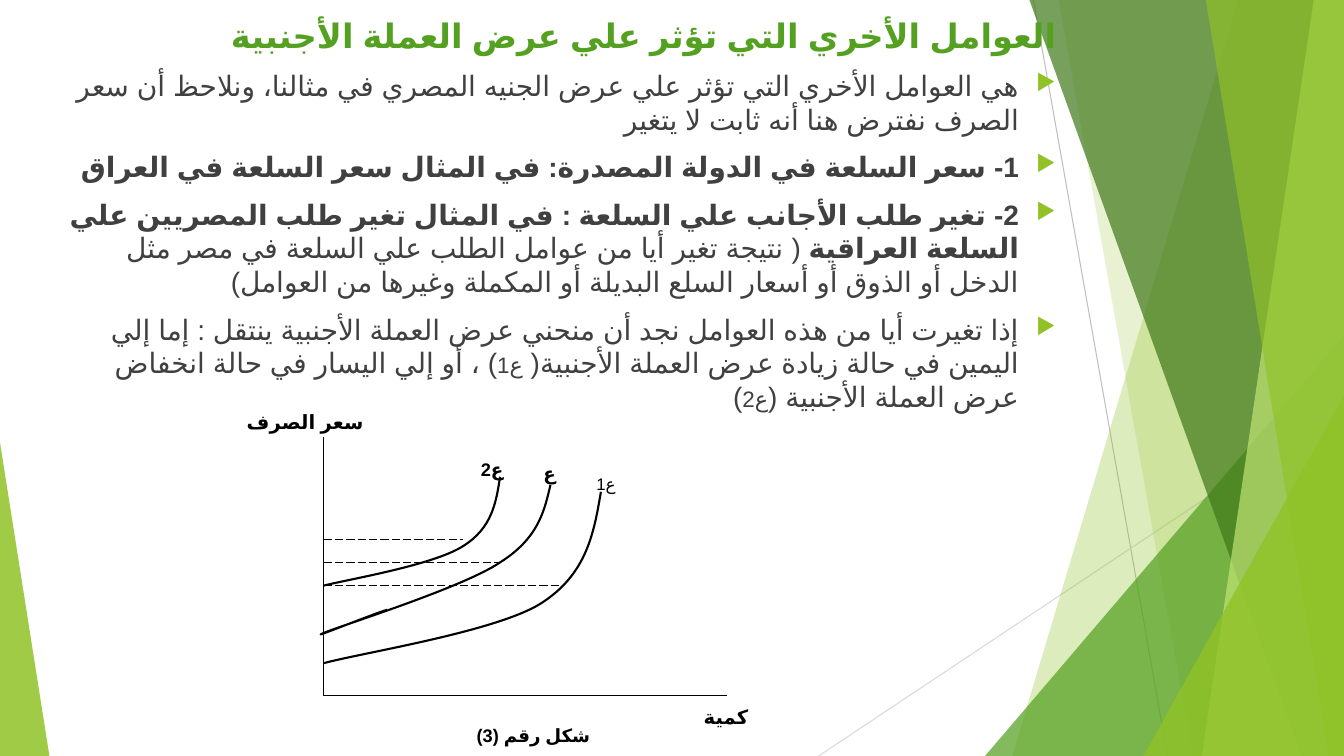
from lxml import etree
from pptx import Presentation
from pptx import util as u
from pptx.dml.color import RGBColor
from pptx.enum import dml, lang, shapes, text
from pptx.oxml.ns import qn

PX = 9144
COLORS = {
    "lime": "90C226", "green": "54A021", "forest": "3F7819", "pale": "C0E474",
    "body": "404040", "black": "000000", "white": "FFFFFF",
    "gray": "BFBFBF", "light": "D9D9D9",
}
HEADING = "العوامل الأخري التي تؤثر علي عرض العملة الأجنبية"
POINTS = [
    [("هي العوامل الأخري التي تؤثر علي عرض الجنيه المصري في مثالنا، ونلاحظ أن سعر الصرف نفترض هنا أنه ثابت لا يتغير", 20, False)],
    [("1- سعر السلعة في الدولة المصدرة: في المثال سعر السلعة في العراق", 20, True)],
    [("2- تغير طلب الأجانب علي السلعة : في المثال تغير طلب المصريين علي السلعة العراقية ", 20, True),
     ("( نتيجة تغير أيا من عوامل الطلب علي السلعة في مصر مثل الدخل أو الذوق أو أسعار السلع البديلة أو المكملة وغيرها من العوامل)", 20, False)],
    [("إذا تغيرت أيا من هذه العوامل نجد أن منحني عرض العملة الأجنبية ينتقل : إما إلي اليمين في حالة زيادة عرض العملة الأجنبية( ", 20, False),
     ("ع1", 16, False),
     (") ، أو إلي اليسار في حالة انخفاض عرض العملة الأجنبية (", 20, False),
     ("ع2", 16, False), (")", 20, False)],
]
WEDGES_BACK = [(1228, 1004, "lime", 30), (1050, 1183, "lime", 20)]
WEDGES_FRONT = [(1021, 1291, "forest", 70), (1303, 1192, "pale", 70),
                (1196, 1318, "lime", 65)]
CURVES = [
    [(362, 85), (355, 126), (348, 167), (302, 196),
     (257, 224), (123, 245), (87, 255)],
    [(312, 78), (306, 104), (300, 131), (262, 155),
     (225, 180), (106, 217), (87, 225), (69, 233), (139, 205), (150, 202)],
    [(262, 70), (258, 96), (254, 121), (225, 139),
     (195, 158), (110, 172), (87, 178)],
]
LABELS = [
    ("كمية", 430, 292, 112, 14, "Calibri", True, True),
    ("شكل رقم (3)", 214, 312, 162, 13, "Calibri", True, True),
    ("ع1", 336, 63, 62, 12, "Arial", False, False),
    ("ع", 280, 52, 62, 13, "Calibri", True, False),
    ("ع2", 223, 48, 62, 13, "Calibri", True, False),
    ("سعر الصرف", 0, 0, 137, 14, "Calibri", True, True),
]


def rgb(name):
    """Return the named colour."""
    return RGBColor.from_string(COLORS[name])


def px(*lengths):
    """Turn px lengths into EMU."""
    return [round(n * PX) for n in lengths]


def style_run(r, font, size, color, bold):
    """Format a run for Latin and complex scripts."""
    r.font.name, r.font.size, r.font.bold = font, u.Pt(size), bold
    r.font.color.rgb = rgb(color)
    r.font.language_id = lang.MSO_LANGUAGE_ID.ARABIC_EGYPT
    etree.SubElement(r.font._element, qn("a:cs"), typeface="Arial")


def set_rtl(p, align):
    """Make a paragraph run right to left."""
    p.alignment = align
    p._p.get_or_add_pPr().set("rtl", "1")


def add_bullet(p):
    """Give a paragraph a hanging triangle bullet."""
    pPr = p._p.get_or_add_pPr()
    pPr.set("marL", "342900")
    pPr.set("indent", "-342900")
    color = etree.SubElement(pPr, qn("a:buClr"))
    etree.SubElement(color, qn("a:srgbClr"), val=COLORS["lime"])
    etree.SubElement(pPr, qn("a:buSzPct"), val="80000")
    etree.SubElement(pPr, qn("a:buChar"), char="▶")


def add_line(s, start, end, color, dashed=False):
    """Draw a thin straight line."""
    line = s.shapes.add_connector(shapes.MSO_CONNECTOR.STRAIGHT, *px(*start, *end))
    line.line.color.rgb, line.line.width = rgb(color), u.Pt(0.75)
    if dashed:
        line.line.dash_style = dml.MSO_LINE.LONG_DASH
    etree.SubElement(line._element.spPr, qn("a:effectLst"))


def add_outline(s, points, close):
    """Build a freeform through px points."""
    start, *rest = [px(*point) for point in points]
    builder = s.shapes.build_freeform(*start)
    builder.add_line_segments(rest, close=close)
    sp = builder.convert_to_shape()
    sp.shadow.inherit = False
    return sp


def add_curve(s, knots):
    """Build joined cubic curves from end and control points."""
    sp = add_outline(s, knots, False)
    segments = sp._element.xpath(".//a:lnTo")
    for i in range(0, len(segments), 3):
        cubic = etree.Element(qn("a:cubicBezTo"))
        segments[i].addprevious(cubic)
        for segment in segments[i:i + 3]:
            cubic.append(segment[0])
            segment.getparent().remove(segment)
    sp.fill.background()
    sp.line.color.rgb, sp.line.width = rgb("black"), u.Pt(1.5)


def tint(sp, color, opacity):
    """Fill a shape with a translucent colour and no line."""
    sp.fill.solid()
    sp.fill.fore_color.rgb = rgb(color)
    clr = sp._element.xpath("./p:spPr/a:solidFill/a:srgbClr")[0]
    etree.SubElement(clr, qn("a:alpha"), val=str(opacity * 1000))
    sp.line.fill.background()


def add_triangle(s, box, apex, color, opacity):
    """Add a translucent right triangle."""
    sp = s.shapes.add_shape(shapes.MSO_SHAPE.ISOSCELES_TRIANGLE, *px(*box))
    sp.adjustments[0] = apex
    sp.shadow.inherit = False
    tint(sp, color, opacity)


def add_wedges(s, box, wedges):
    """Add slanted panels that reach the right edge of the box."""
    x, y, w, h = box
    for top, bottom, color, opacity in wedges:
        corners = [(x + top, y), (x + w, y), (x + w, y + h), (x + bottom, y + h)]
        tint(add_outline(s, corners, True), color, opacity)


def add_backdrop(s, box):
    """Draw the green facets along the slide's sides."""
    x, y, w, h = box
    add_line(s, (x + 1025, y), (x + 1158, y + h), "gray")
    add_line(s, (x + w, y + 403), (x + 812, y + h), "light")
    add_wedges(s, box, WEDGES_BACK)
    add_triangle(s, (x + w - 356, y + h - 417, 356, 417), 1, "green", 72)
    add_wedges(s, box, WEDGES_FRONT)
    add_triangle(s, (x + w - 199, y + h - 357, 199, 357), 1, "lime", 80)
    add_triangle(s, (x, y + h - 311, 49, 311), 0, "lime", 85)


def add_heading(s, box):
    """Place the title above the facets."""
    title = s.shapes.title
    title._element.getparent().append(title._element)
    title.left, title.top, title.width, title.height = px(*box)
    tf = title.text_frame
    tf.text = HEADING
    tf.word_wrap, tf.auto_size = True, text.MSO_AUTO_SIZE.NONE
    tf.vertical_anchor = text.MSO_ANCHOR.TOP
    set_rtl(tf.paragraphs[0], text.PP_ALIGN.RIGHT)
    style_run(tf.paragraphs[0].runs[0], "Roboto", 24, "green", True)


def add_points(s, box):
    """Place the bulleted explanation."""
    tf = s.shapes.add_textbox(*px(*box)).text_frame
    tf.word_wrap = True
    for i, runs in enumerate(POINTS):
        p = tf.add_paragraph() if i else tf.paragraphs[0]
        set_rtl(p, text.PP_ALIGN.RIGHT)
        p.space_before = u.Pt(10 if i else 0)
        add_bullet(p)
        for words, size, bold in runs:
            r = p.add_run()
            r.text = words
            style_run(r, "Roboto", size, "body", bold)


def add_label(s, x, y, w, label):
    """Add one centred graph label."""
    words, size, font, bold, filled = label
    sp = s.shapes.add_textbox(*px(x, y, w, 23))
    if filled:
        sp.fill.solid()
        sp.fill.fore_color.rgb = rgb("white")
    tf = sp.text_frame
    tf.text, tf.word_wrap = words, True
    tf.margin_left = tf.margin_right = tf.margin_bottom = 0
    tf.margin_top = px(4)[0]
    set_rtl(tf.paragraphs[0], text.PP_ALIGN.CENTER)
    style_run(tf.paragraphs[0].runs[0], font, size, "black", bold)


def add_supply_graph(s, box):
    """Draw the axes, price levels, supply curves and labels."""
    x, y, _, _ = box
    axis, base = x + 87, y + 287
    add_line(s, (axis, y + 31), (axis, base), "black")
    add_line(s, (x + 487, base), (axis, base), "black")
    for level, end in ((178, 325), (155, 262), (132, 225)):
        add_line(s, (axis, y + level), (x + end, y + level), "black", True)
    for knots in CURVES:
        add_curve(s, [(x + a, y + b) for a, b in knots])
    for words, left, top, width, *style in LABELS:
        add_label(s, x + left, y + top, width, (words, *style))


def main():
    """Build and save the slide."""
    prs = Presentation()
    prs.slide_width, prs.slide_height = px(1333, 750)
    s = prs.slides.add_slide(prs.slide_layouts[5])
    add_backdrop(s, (0, 0, 1333, 750))
    add_heading(s, (41, 10, 1017, 53))
    add_points(s, (41, 63, 1017, 350))
    add_supply_graph(s, (234, 403, 542, 335))
    prs.save("out.pptx")


if __name__ == "__main__":
    main()
